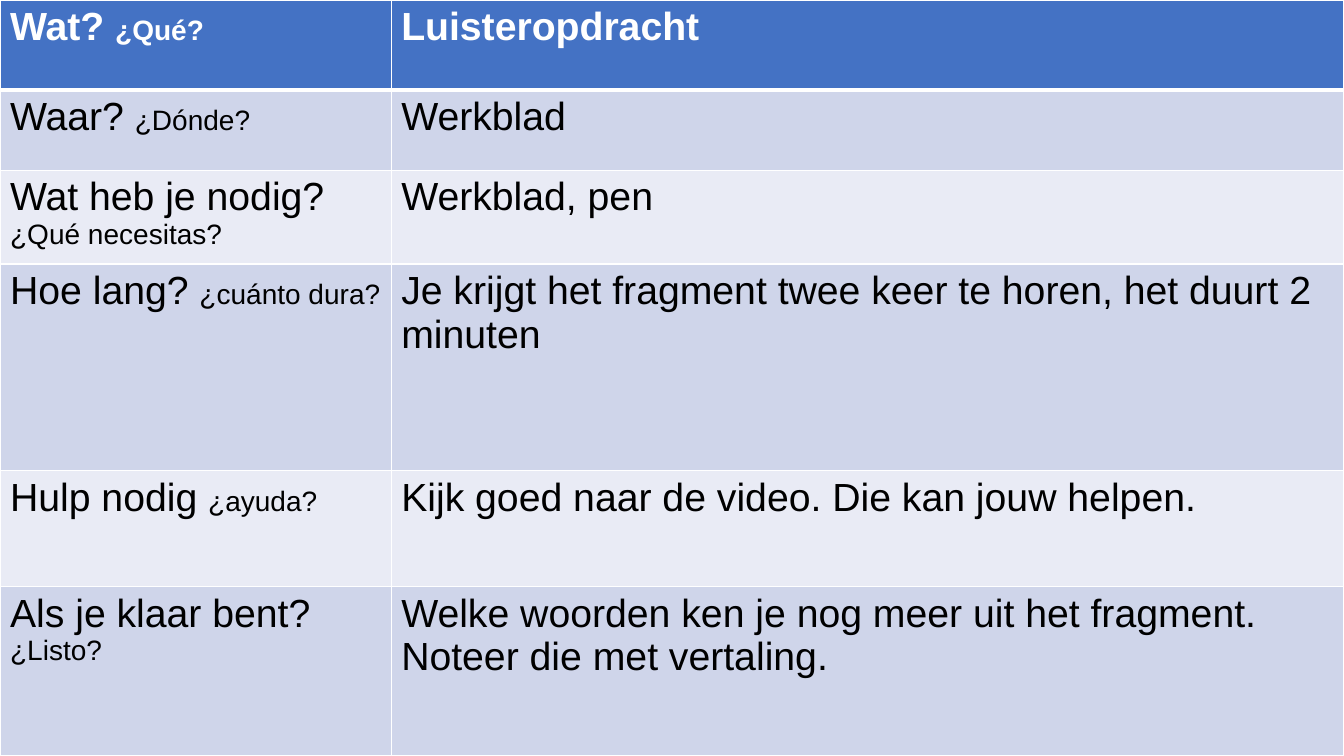
from lxml import etree
from pptx import Presentation
from pptx import util as u
from pptx.dml.color import RGBColor
from pptx.oxml import ns

WHITE = RGBColor(0xFF, 0xFF, 0xFF)
BLACK = RGBColor(0x00, 0x00, 0x00)
HEADER = RGBColor(0x44, 0x72, 0xC4)
BAND_DARK = RGBColor(0xCF, 0xD5, 0xEA)
BAND_LIGHT = RGBColor(0xE9, 0xEB, 0xF5)

COLUMN_WIDTHS = [3.88, 9.45]
ROW_HEIGHTS = [0.89, 0.8, 0.93, 2.05, 1.15, 1.68]
ROWS = [
    ("Wat? ", "¿Qué?", "Luisteropdracht"),
    ("Waar? ", "¿Dónde?", "Werkblad"),
    ("Wat heb je nodig? ", "¿Qué necesitas?", "Werkblad, pen"),
    ("Hoe lang? ", "¿cuánto dura?",
     "Je krijgt het fragment twee keer te horen, het duurt 2 minuten"),
    ("Hulp nodig ", "¿ayuda?", "Kijk goed naar de video. Die kan jouw helpen."),
    ("Als je klaar bent? ", "¿Listo?",
     "Welke woorden ken je nog meer uit het fragment. Noteer die met vertaling."),
]


def add_run(p, content, size=28, color=BLACK, bold=False, font="Arial"):
    r = p.add_run()
    r.text = content
    r.font.name = font
    r.font.size = u.Pt(size)
    r.font.bold = bold
    r.font.color.rgb = color


class TaskSlide:
    """Draws a two-column task table on one slide."""

    def __init__(self, prs):
        self.s = prs.slides.add_slide(prs.slide_layouts[6])

    def border(self, cell, side, width):
        tc_pr = cell._tc.get_or_add_tcPr()
        ln = etree.SubElement(tc_pr, ns.qn(f"a:ln{side}"), w=str(u.Pt(width)))
        fill = etree.SubElement(ln, ns.qn("a:solidFill"))
        etree.SubElement(fill, ns.qn("a:srgbClr"), val=str(WHITE))

    def cell(self, cell, row, runs):
        widths = {"L": 1, "R": 1, "T": 3 if row == 1 else 1, "B": 3 if row == 0 else 1}
        for side, width in widths.items():
            self.border(cell, side, width)
        cell.fill.solid()
        band = BAND_DARK if row % 2 else BAND_LIGHT
        cell.fill.fore_color.rgb = band if row else HEADER
        p = cell.text_frame.paragraphs[0]
        for content, size in runs:
            add_run(p, content, size=size, color=BLACK if row else WHITE, bold=row == 0)

    def table(self, rows, widths, heights):
        frame = self.s.shapes.add_table(
            len(rows), len(widths), 0, 0,
            u.Inches(sum(widths)), u.Inches(sum(heights)))
        table = frame.table
        for column, width in zip(table.columns, widths):
            column.width = u.Inches(width)
        for i, (question, spanish, answer) in enumerate(rows):
            table.rows[i].height = u.Inches(heights[i])
            self.cell(table.cell(i, 0), i, [(question, 28), (spanish, 20)])
            self.cell(table.cell(i, 1), i, [(answer, 28)])


def main():
    prs = Presentation()
    prs.slide_width = u.Inches(13.33)
    prs.slide_height = u.Inches(7.5)
    TaskSlide(prs).table(ROWS, COLUMN_WIDTHS, ROW_HEIGHTS)
    prs.save("out.pptx")


if __name__ == "__main__":
    main()
